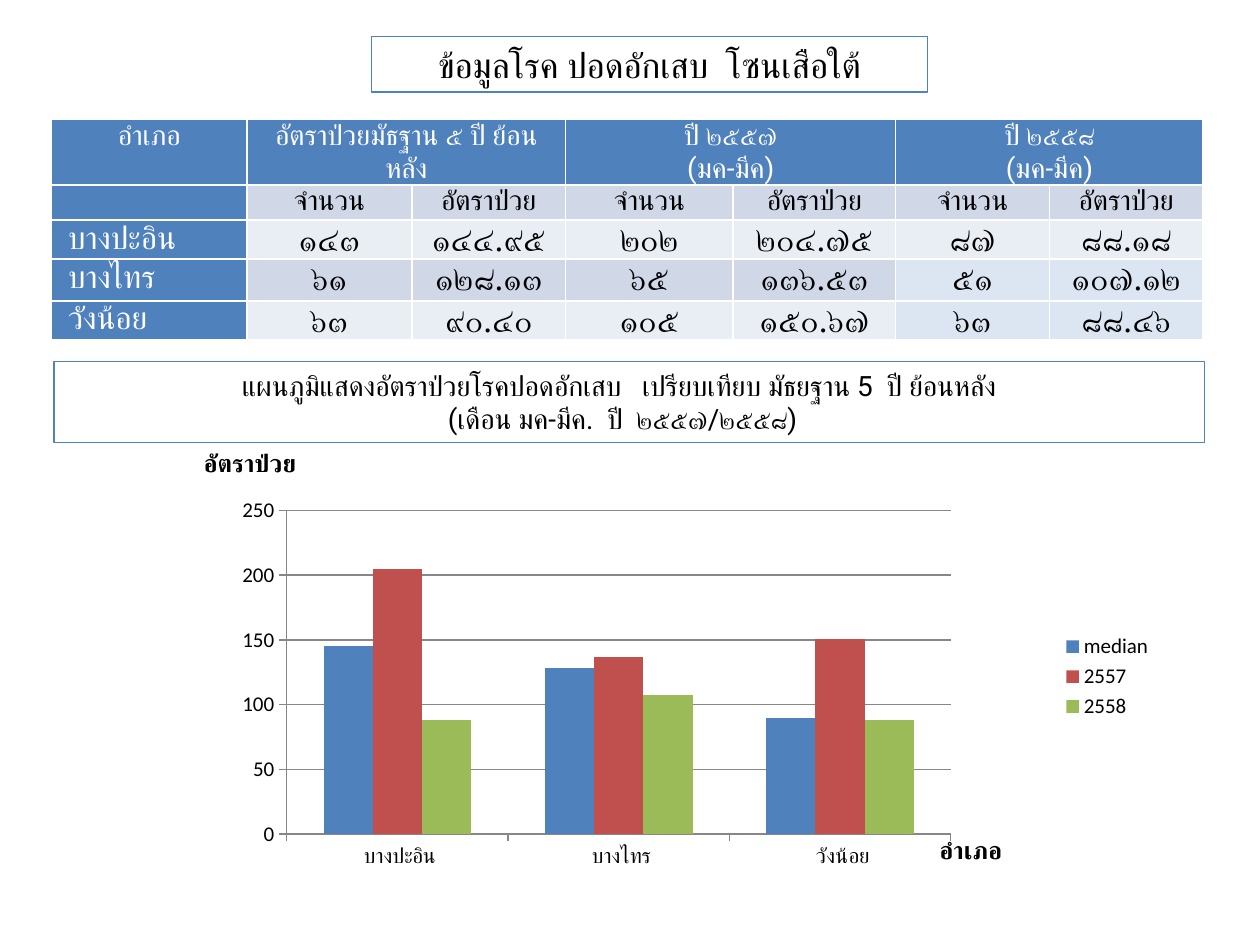
from lxml import etree
from pptx import Presentation
from pptx.chart.data import CategoryChartData
from pptx.dml.color import RGBColor
from pptx.enum.chart import XL_CHART_TYPE, XL_LEGEND_POSITION, XL_TICK_MARK
from pptx.enum.shapes import MSO_SHAPE
from pptx.enum.text import MSO_ANCHOR, MSO_AUTO_SIZE, PP_ALIGN
from pptx.oxml import parse_xml
from pptx.oxml.ns import nsdecls, qn
from pptx.util import Inches, Pt

COLUMN_CLUSTERED = XL_CHART_TYPE.COLUMN_CLUSTERED
LEGEND_RIGHT = XL_LEGEND_POSITION.RIGHT
TICK_OUT = XL_TICK_MARK.OUTSIDE
RECTANGLE = MSO_SHAPE.RECTANGLE
MIDDLE = MSO_ANCHOR.MIDDLE
NO_AUTOFIT = MSO_AUTO_SIZE.NONE
LEFT, CENTER = PP_ALIGN.LEFT, PP_ALIGN.CENTER

COLORS = {
    "blue": "4F81BD", "red": "C0504D", "green": "9BBB59",
    "band_dark": "D0D8E8", "band_light": "E9EDF4", "highlight": "DCE6F2",
    "grid": "878787", "black": "000000", "white": "FFFFFF",
}
THAI_FONT, NUMBER_FONT, CHART_FONT = "Roboto", "Times New Roman", "Calibri"
TITLE_ONLY = 5

DISTRICTS = [" บางปะอิน", " บางไทร", " วังน้อย"]
PERIODS = [["อัตราป่วยมัธฐาน ๕ ปี ย้อนหลัง"], ["ปี ๒๕๕๗", "(มค-มีค)"], ["ปี ๒๕๕๘", "(มค-มีค)"]]
FIGURES = [
    ["๑๔๓", "๑๔๔.๙๕", "๒๐๒", "๒๐๔.๗๕", "๘๗", "๘๘.๑๘"],
    ["๖๑", "๑๒๘.๑๓", "๖๕", "๑๓๖.๕๓", "๕๑", "๑๐๗.๑๒"],
    ["๖๓", "๙๐.๔๐", "๑๐๕", "๑๕๐.๖๗", "๖๓", "๘๘.๔๖"],
]
SERIES = [
    ("median", [145, 128, 90], "blue"),
    ("2557", [205, 137, 151], "red"),
    ("2558", [88, 107, 88], "green"),
]


def rgb(name):
    return RGBColor.from_string(COLORS[name])


def write(text_frame, lines, size, color="black", font=THAI_FONT, bold=False, align=CENTER):
    for index, line in enumerate(lines):
        paragraph = text_frame.paragraphs[0] if index == 0 else text_frame.add_paragraph()
        paragraph.alignment = align
        run = paragraph.add_run()
        run.text = line
        run.font.size = Pt(size)
        run.font.bold = bold
        run.font.name = font
        run.font.color.rgb = rgb(color)
        # Thai letters take the complex-script font
        etree.SubElement(run.font._element, qn("a:cs")).set("typeface", font)


def outline(shape):
    shape.fill.background()
    shape.line.color.rgb = rgb("blue")
    shape.line.width = Pt(0.75)


def add_title(slide, left, top, width, height):
    title = slide.shapes.title
    title.left, title.top, title.width, title.height = left, top, width, height
    outline(title)
    title.text_frame.auto_size = NO_AUTOFIT
    title.text_frame.vertical_anchor = MIDDLE
    write(title.text_frame, ["ข้อมูลโรค ปอดอักเสบ  โซนเสือใต้"], 20)


def fill_cell(cell, fill, lines, size, **style):
    cell.margin_left = cell.margin_right = Inches(0.07)
    cell.margin_top = cell.margin_bottom = 0
    cell.fill.solid()
    cell.fill.fore_color.rgb = rgb(fill)
    write(cell.text_frame, lines, size, **style)


def add_rate_table(slide, left, top, width, height):
    table = slide.shapes.add_table(5, 7, left, top, width, height).table
    for column, size in zip(table.columns, [1.55, 1.31, 1.22, 1.33, 1.29, 1.22, 1.22]):
        column.width = Inches(size)
    for row, size in zip(table.rows, [0.48, 0.25, 0.31, 0.33, 0.31]):
        row.height = Inches(size)

    # Two header rows
    fill_cell(table.cell(0, 0), "blue", ["อำเภอ"], 16, color="white")
    fill_cell(table.cell(1, 0), "blue", [""], 16)
    for index, period in enumerate(PERIODS):
        first = 2 * index + 1
        table.cell(0, first).merge(table.cell(0, first + 1))
        fill_cell(table.cell(0, first), "blue", period, 16, color="white")
        for offset, label in enumerate(["จำนวน", "อัตราป่วย"]):
            fill_cell(table.cell(1, first + offset), "band_dark", [label], 16)

    # District rows
    for row, (district, figures) in enumerate(zip(DISTRICTS, FIGURES), start=2):
        fill_cell(table.cell(row, 0), "blue", [district], 18, color="white", align=LEFT)
        band = "band_dark" if row % 2 else "band_light"
        for column, figure in enumerate(figures, start=1):
            fill = "highlight" if row > 2 and column > 4 else band
            fill_cell(table.cell(row, column), fill, [figure], 20, font=NUMBER_FONT)


def add_chart_heading(slide, left, top, width, height):
    box = slide.shapes.add_shape(RECTANGLE, left, top, width, height)
    box.shadow.inherit = False
    outline(box)
    box.text_frame.word_wrap = True
    box.text_frame.vertical_anchor = MIDDLE
    write(box.text_frame, [
        "แผนภูมิแสดงอัตราป่วยโรคปอดอักเสบ   เปรียบเทียบ มัธยฐาน 5  ปี ย้อนหลัง   ",
        "(เดือน มค-มีค.  ปี  ๒๕๕๗/๒๕๕๘)  ",
    ], 16)


def add_axis_label(slide, text, left, top, width, height):
    label = slide.shapes.add_textbox(left, top, width, height)
    label.text_frame.word_wrap = False
    write(label.text_frame, [text], 14, bold=True, align=LEFT)


def place_plot(chart, x, y, width, height):
    plot_area = chart._chartSpace.chart.plotArea
    for old in plot_area.findall(qn("c:layout")):
        plot_area.remove(old)
    plot_area.insert(0, parse_xml(
        f'<c:layout {nsdecls("c")}><c:manualLayout><c:layoutTarget val="inner"/>'
        '<c:xMode val="edge"/><c:yMode val="edge"/>'
        f'<c:x val="{x}"/><c:y val="{y}"/><c:w val="{width}"/><c:h val="{height}"/>'
        '</c:manualLayout></c:layout>'))


def add_rate_chart(slide, left, top, width, height):
    data = CategoryChartData()
    data.categories = DISTRICTS
    for name, values, _ in SERIES:
        data.add_series(name, values)
    chart = slide.shapes.add_chart(COLUMN_CLUSTERED, left, top, width, height, data).chart
    chart.has_title = False
    chart.font.name = CHART_FONT
    chart.font.size = Pt(12)
    chart.font.color.rgb = rgb("black")
    place_plot(chart, 0.14, 0.11, 0.65, 0.76)

    # Columns
    plot = chart.plots[0]
    plot.gap_width = 150
    plot.overlap = 0
    plot.vary_by_categories = False
    for series, (_, _, color) in zip(plot.series, SERIES):
        series.format.fill.solid()
        series.format.fill.fore_color.rgb = rgb(color)

    # Axes and legend
    value_axis = chart.value_axis
    value_axis.minimum_scale, value_axis.maximum_scale = 0, 250
    value_axis.major_unit = 50
    value_axis.tick_labels.number_format = "#,##0"
    value_axis.tick_labels.number_format_is_linked = False
    value_axis.has_major_gridlines = True
    value_axis.major_gridlines.format.line.color.rgb = rgb("grid")
    for axis in (value_axis, chart.category_axis):
        axis.major_tick_mark = TICK_OUT
        axis.format.line.color.rgb = rgb("grid")
    chart.has_legend = True
    chart.legend.position = LEGEND_RIGHT
    chart.legend.include_in_layout = False


def main():
    presentation = Presentation()
    presentation.slide_width, presentation.slide_height = Inches(10), Inches(7.5)
    slide = presentation.slides.add_slide(presentation.slide_layouts[TITLE_ONLY])
    add_title(slide, Inches(2.95), Inches(0.29), Inches(4.41), Inches(0.44))
    add_rate_table(slide, Inches(0.41), Inches(0.95), Inches(9.13), Inches(1.68))
    add_chart_heading(slide, Inches(0.43), Inches(2.87), Inches(9.13), Inches(0.64))
    add_axis_label(slide, "อัตราป่วย", Inches(1.52), Inches(3.51), Inches(1.03), Inches(0.34))
    add_axis_label(slide, "อำเภอ", Inches(7.36), Inches(6.58), Inches(0.76), Inches(0.34))
    add_rate_chart(slide, Inches(1.14), Inches(3.68), Inches(8.11), Inches(3.38))
    presentation.save("out.pptx")


if __name__ == "__main__":
    main()
